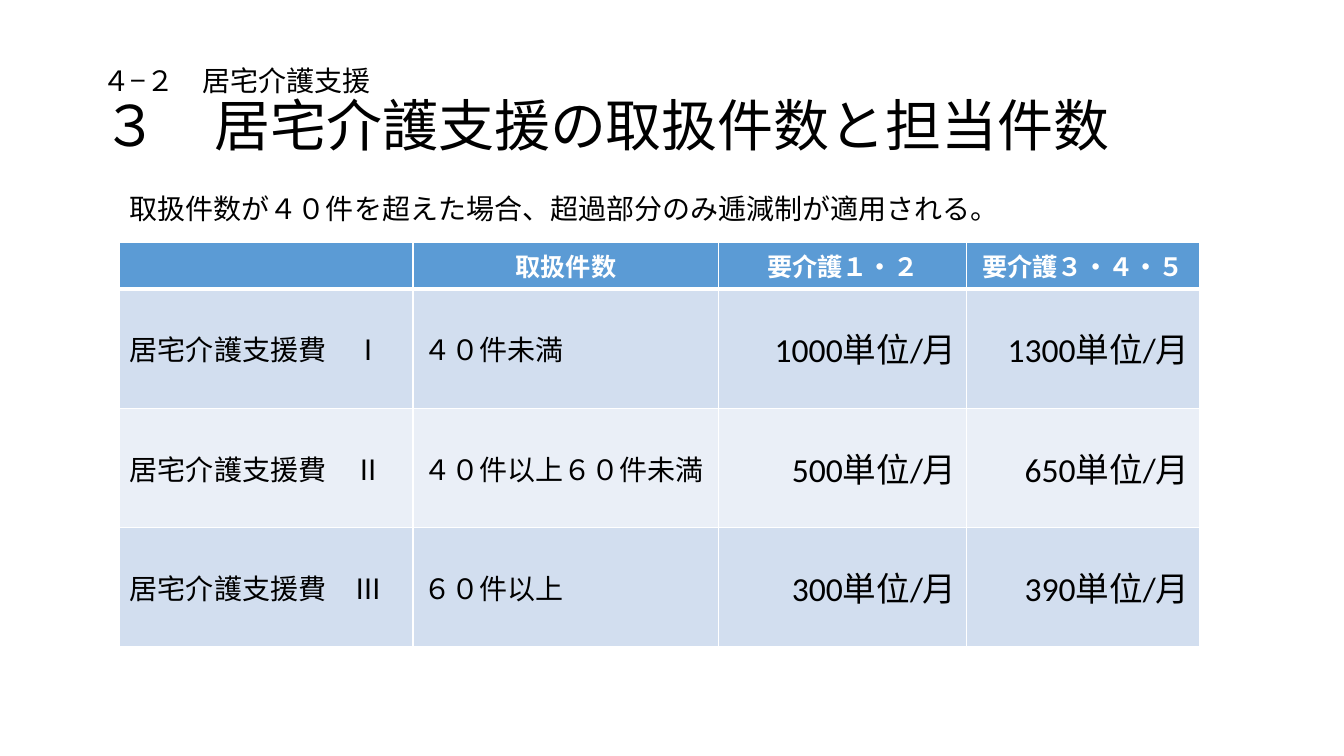
from lxml.etree import SubElement
from pptx import Presentation
from pptx.dml.color import RGBColor
from pptx.enum.text import MSO_ANCHOR as Anchor, MSO_AUTO_SIZE as AutoSize, PP_ALIGN as Align
from pptx.oxml.ns import qn
from pptx.util import Cm, Pt

BLACK, WHITE = "000000", "FFFFFF"
HEADER_FILL = "5B9BD5"
BAND_FILLS = ("D2DEEF", "EAEFF7")
COLUMN_WIDTHS = (7.39, 7.7, 6.25, 5.87)
HEADER_HEIGHT, ROW_HEIGHT = 1.17, 3.01
ROWS = (
    ("", "取扱件数", "要介護１・２", "要介護３・４・５"),
    ("居宅介護支援費　Ⅰ", "４０件未満", "1000単位/月", "1300単位/月"),
    ("居宅介護支援費　Ⅱ", "４０件以上６０件未満", "500単位/月", "650単位/月"),
    ("居宅介護支援費　Ⅲ", "６０件以上", "300単位/月", "390単位/月"),
)


def color(value):
    """Turn a hex string into a colour."""
    return RGBColor.from_string(value)


def format_span(span, size, hue=BLACK, bold=False):
    """Set the font of one run."""
    span.font.name = "Calibri"
    span.font.size = Pt(size)
    span.font.bold = bold
    span.font.color.rgb = color(hue)


def add_title(page, section, heading):
    """Fill the title placeholder with a small section line and a heading."""
    title = page.shapes.title
    title.left, title.top, title.width, title.height = Cm(2.33), Cm(1.01), Cm(29.21), Cm(3.68)
    frame = title.text_frame
    frame.text = f"{section}\v{heading}"
    frame.auto_size = AutoSize.NONE
    frame.vertical_anchor = Anchor.MIDDLE
    para = frame.paragraphs[0]
    para.alignment = Align.LEFT
    para.line_spacing = 0.9
    para.space_before = Pt(0)
    for span, size in zip(para.runs, (20, 40)):
        format_span(span, size)


def add_note(page, text):
    """Add the sentence above the table."""
    box = page.shapes.add_textbox(Cm(3.02), Cm(4.7), Cm(22.61), Cm(1.88))
    frame = box.text_frame
    frame.text = text
    frame.word_wrap = False
    format_span(frame.paragraphs[0].runs[0], 20)


def set_borders(cell, bottom):
    """Draw white cell borders with the given bottom width in points."""
    properties = cell._tc.get_or_add_tcPr()
    for side, width in (("L", 1), ("R", 1), ("T", 1), ("B", bottom)):
        line = SubElement(properties, qn(f"a:ln{side}"), w=str(Pt(width)))
        fill = SubElement(line, qn("a:solidFill"))
        SubElement(fill, qn("a:srgbClr"), val=WHITE)


def fill_cell(cell, text, row, column):
    """Write and format one table cell according to its place."""
    header = row == 0
    numeric = column > 1
    set_borders(cell, 3 if header else 1)
    cell.fill.solid()
    cell.fill.fore_color.rgb = color(HEADER_FILL if header else BAND_FILLS[(row - 1) % 2])
    cell.vertical_anchor = Anchor.TOP if header else Anchor.MIDDLE
    cell.text_frame.text = text
    para = cell.text_frame.paragraphs[0]
    if header:
        para.alignment = Align.CENTER
    else:
        para.alignment = Align.RIGHT if numeric else Align.LEFT
    size = 18 if header else 24 if numeric else 20
    for span in para.runs:
        format_span(span, size, WHITE if header else BLACK, header)


def add_fee_table(page):
    """Add the table of units per month."""
    height = HEADER_HEIGHT + ROW_HEIGHT * (len(ROWS) - 1)
    table = page.shapes.add_table(
        len(ROWS), len(COLUMN_WIDTHS), Cm(3.02), Cm(6.1), Cm(sum(COLUMN_WIDTHS)), Cm(height)
    ).table
    for column, width in zip(table.columns, COLUMN_WIDTHS):
        column.width = Cm(width)
    for row, texts in enumerate(ROWS):
        table.rows[row].height = Cm(ROW_HEIGHT if row else HEADER_HEIGHT)
        for column, text in enumerate(texts):
            fill_cell(table.cell(row, column), text, row, column)


def main():
    """Build the slide and save it."""
    deck = Presentation()
    deck.slide_width, deck.slide_height = Cm(33.87), Cm(19.05)
    page = deck.slides.add_slide(deck.slide_layouts[5])
    add_title(page, "４−２　居宅介護支援", "３　居宅介護支援の取扱件数と担当件数")
    add_fee_table(page)
    add_note(page, "取扱件数が４０件を超えた場合、超過部分のみ逓減制が適用される。")
    deck.save("out.pptx")


if __name__ == "__main__":
    main()
